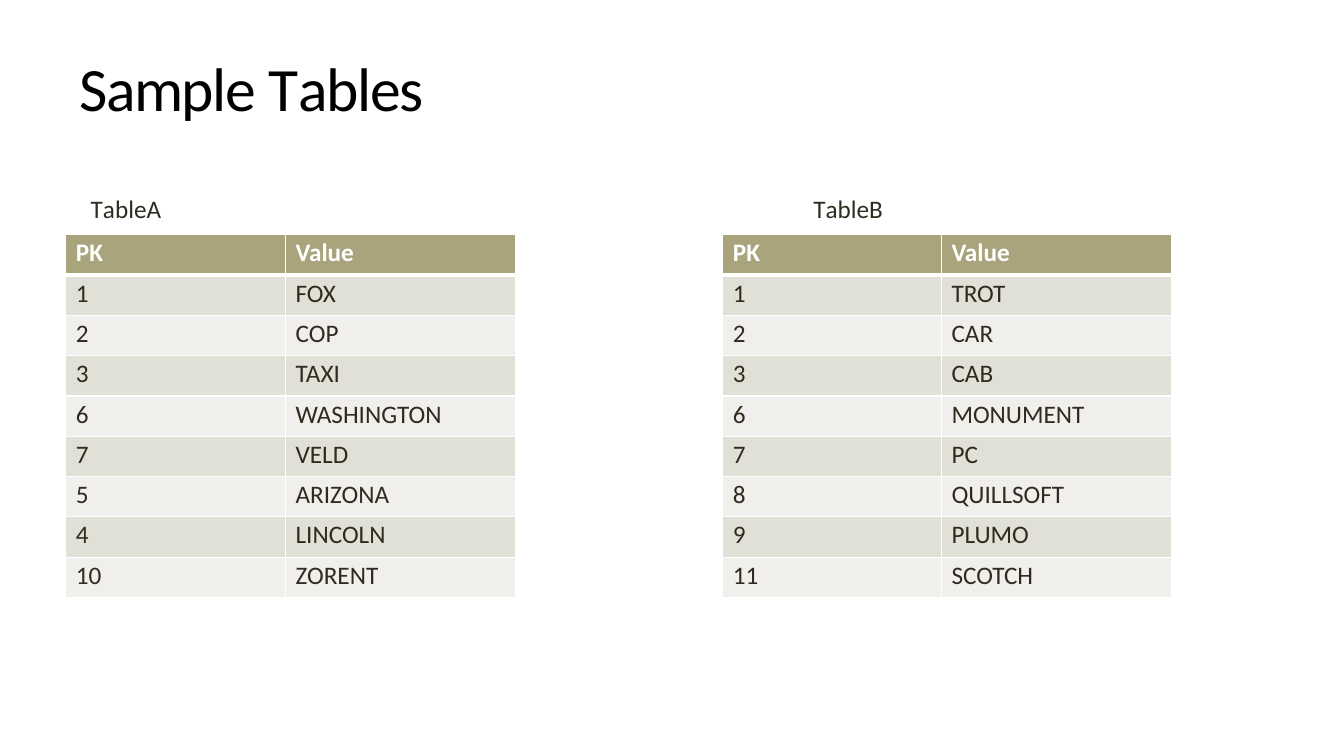
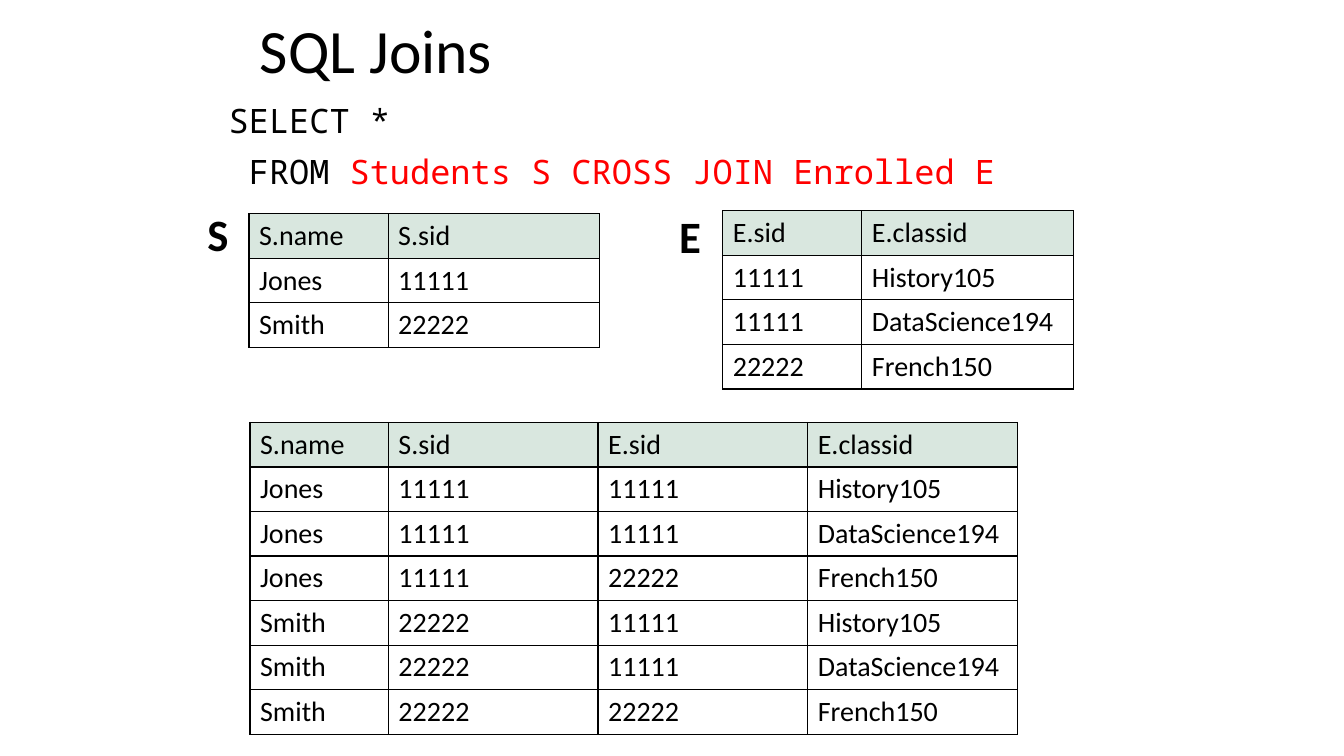
"""Build two slides: sample tables and a SQL cross join."""
from itertools import product

from lxml import etree
from pptx import Presentation
from pptx.dml.color import RGBColor
from pptx.enum.text import MSO_ANCHOR
from pptx.oxml.ns import qn
from pptx.util import Inches, Pt

TOP, MIDDLE = MSO_ANCHOR.TOP, MSO_ANCHOR.MIDDLE
SLIDE_WIDTH, SLIDE_HEIGHT = Inches(13.333), Inches(7.5)
BLANK_LAYOUT = 6

BLACK = RGBColor(0x00, 0x00, 0x00)
WHITE = RGBColor(0xFF, 0xFF, 0xFF)
RED = RGBColor(0xFF, 0x00, 0x00)
INK = RGBColor(0x2E, 0x2B, 0x1F)
OLIVE = RGBColor(0xA9, 0xA4, 0x7B)
DARK_BAND = RGBColor(0xE1, 0xE0, 0xD6)
LIGHT_BAND = RGBColor(0xF0, 0xEF, 0xEB)
MINT = RGBColor(0xD9, 0xE7, 0xDF)

SANS, MONO = "Calibri", "Noto Sans Mono"
TITLE_SIZE = 44
DEFAULT_INSETS = (Inches(0.1), Inches(0.05))
TIGHT_INSETS = (Inches(0.01), Inches(0.01))
BANDED_INSETS = (Inches(0.1), Inches(0.03))

KEYED_HEADER = ("PK", "Value")
TABLE_A = (("1", "FOX"), ("2", "COP"), ("3", "TAXI"), ("6", "WASHINGTON"),
           ("7", "VELD"), ("5", "ARIZONA"), ("4", "LINCOLN"), ("10", "ZORENT"))
TABLE_B = (("1", "TROT"), ("2", "CAR"), ("3", "CAB"), ("6", "MONUMENT"),
           ("7", "PC"), ("8", "QUILLSOFT"), ("9", "PLUMO"), ("11", "SCOTCH"))
STUDENT_HEADER = ("S.name", "S.sid")
STUDENTS = (("Jones", "11111"), ("Smith", "22222"))
ENROLLED_HEADER = ("E.sid", "E.classid")
ENROLLED = (("11111", "History105"), ("11111", "DataScience194"), ("22222", "French150"))


def across(percent):
    """Return a percentage of the slide's width."""
    return round(SLIDE_WIDTH * percent / 100)


def down(percent):
    """Return a percentage of the slide's height."""
    return round(SLIDE_HEIGHT * percent / 100)


def add_run(paragraph, text, size, color, font=SANS, bold=False, spacing=0):
    """Add a formatted run, with letter spacing in points."""
    run = paragraph.add_run()
    run.text = text
    run.font.size = Pt(size)
    run.font.name = font
    run.font.bold = bold
    run.font.color.rgb = color
    if spacing:
        run.font._element.set("spc", str(round(spacing * 100)))


def add_text_box(slide, box, insets=DEFAULT_INSETS, anchor=TOP, wrap=True):
    """Add a text box, placed in percent of the slide, and return its frame."""
    left, top, width, height = box
    shape = slide.shapes.add_textbox(across(left), down(top), across(width), down(height))
    frame = shape.text_frame
    frame.word_wrap = wrap
    frame.vertical_anchor = anchor
    frame.margin_left = frame.margin_right = insets[0]
    frame.margin_top = frame.margin_bottom = insets[1]
    return frame


def add_title(slide, box, runs, insets=DEFAULT_INSETS):
    """Add a slide title from pairs of text and letter spacing."""
    paragraph = add_text_box(slide, box, insets, MIDDLE).paragraphs[0]
    paragraph.line_spacing = 0.9
    for text, spacing in runs:
        add_run(paragraph, text, TITLE_SIZE, BLACK, spacing=spacing)


def add_query(slide, box, lines):
    """Add lines of code, each a list of pairs of text and colour."""
    frame = add_text_box(slide, box)
    for index, line in enumerate(lines):
        paragraph = frame.add_paragraph() if index else frame.paragraphs[0]
        paragraph.line_spacing = 0.9
        paragraph.space_before = Pt(10)
        for text, color in line:
            add_run(paragraph, text, 24, color, MONO)


def set_borders(cell, color, top=1, bottom=1):
    """Draw the four borders of a cell, with widths in points."""
    properties = cell._tc.get_or_add_tcPr()
    for side, width in (("L", 1), ("R", 1), ("T", top), ("B", bottom)):
        line = etree.SubElement(properties, qn(f"a:ln{side}"), w=str(Pt(width)))
        fill = etree.SubElement(line, qn("a:solidFill"))
        etree.SubElement(fill, qn("a:srgbClr"), val=str(color))


def add_table(slide, left, top, columns, row_height, rows, style_cell):
    """Add a table in percent of the slide and style each of its cells."""
    frame = slide.shapes.add_table(len(rows), len(columns), across(left), down(top),
                                   across(sum(columns)), down(row_height * len(rows)))
    table = frame.table
    table.first_row = table.horz_banding = False
    for column, width in zip(table.columns, columns):
        column.width = across(width)
    for row_index, texts in enumerate(rows):
        table.rows[row_index].height = down(row_height)
        for column_index, text in enumerate(texts):
            style_cell(table.cell(row_index, column_index), row_index, text)


def style_banded_cell(cell, row_index, text):
    """Style a cell with an olive header and alternating bands."""
    header = row_index == 0
    cell.margin_left, cell.margin_top = BANDED_INSETS
    cell.margin_right = cell.margin_bottom = 0
    set_borders(cell, WHITE, 3 if row_index == 1 else 1, 3 if header else 1)
    cell.fill.solid()
    band = DARK_BAND if row_index % 2 else LIGHT_BAND
    cell.fill.fore_color.rgb = OLIVE if header else band
    add_run(cell.text_frame.paragraphs[0], text, 18, WHITE if header else INK, bold=header)


def style_ruled_cell(cell, row_index, text):
    """Style a cell with black rules and a mint header."""
    set_borders(cell, BLACK)
    if row_index == 0:
        cell.fill.solid()
        cell.fill.fore_color.rgb = MINT
    else:
        cell.fill.background()
    add_run(cell.text_frame.paragraphs[0], text, 20, BLACK)


def build_sample_tables(slide):
    """Fill the slide with two captioned tables."""
    add_title(slide, (5.85, 7.07, 37.6, 10.13),
              (("Sample ", -1.1), ("T", -4.6), ("ables", -1)), TIGHT_INSETS)
    for letter, rows, left, caption_left, key_width in (
            ("A", TABLE_A, 4.9, 6.68, 16.35), ("B", TABLE_B, 53.78, 60.45, 16.27)):
        add_table(slide, left, 31.07, (key_width, 17.1), 5.33,
                  (KEYED_HEADER, *rows), style_banded_cell)
        caption = add_text_box(slide, (caption_left, 25.47, 7.05, 4.4), TIGHT_INSETS)
        add_run(caption.paragraphs[0], "T", 18, INK, spacing=-1.4)
        add_run(caption.paragraphs[0], f"able{letter}", 18, INK)


def build_joins(slide):
    """Fill the slide with a query, its two inputs and their cross join."""
    add_title(slide, (18.6, 1.07, 63.6, 12.13), (("SQL Joins", 0),))
    add_query(slide, (16.28, 13.2, 68.93, 82.53), (
        (("SELECT *", BLACK),),
        ((" FROM ", BLACK), ("Students S CROSS JOIN Enrolled E", RED))))
    pair, row_height = (10.35, 15.75), 5.9
    joined = [student + enrolled for student, enrolled in product(STUDENTS, ENROLLED)]
    for left, top, columns, rows in (
            (18.53, 28.27, pair, (STUDENT_HEADER, *STUDENTS)),
            (53.78, 27.87, pair, (ENROLLED_HEADER, *ENROLLED)),
            (18.6, 55.87, (10.3, 15.6, 15.6, 15.6),
             (STUDENT_HEADER + ENROLLED_HEADER, *joined))):
        add_table(slide, left, top, columns, row_height, rows, style_ruled_cell)
    for letter, left, top in (("E", 49.8, 26.93), ("S", 14.7, 26.67)):
        label = add_text_box(slide, (left, top, 3.15, 8.53), wrap=False)
        add_run(label.paragraphs[0], letter, 32, BLACK, bold=True)


def main():
    """Build and save the presentation."""
    presentation = Presentation()
    presentation.slide_width, presentation.slide_height = SLIDE_WIDTH, SLIDE_HEIGHT
    layout = presentation.slide_layouts[BLANK_LAYOUT]
    for build in (build_sample_tables, build_joins):
        build(presentation.slides.add_slide(layout))
    presentation.save("out.pptx")


if __name__ == "__main__":
    main()
